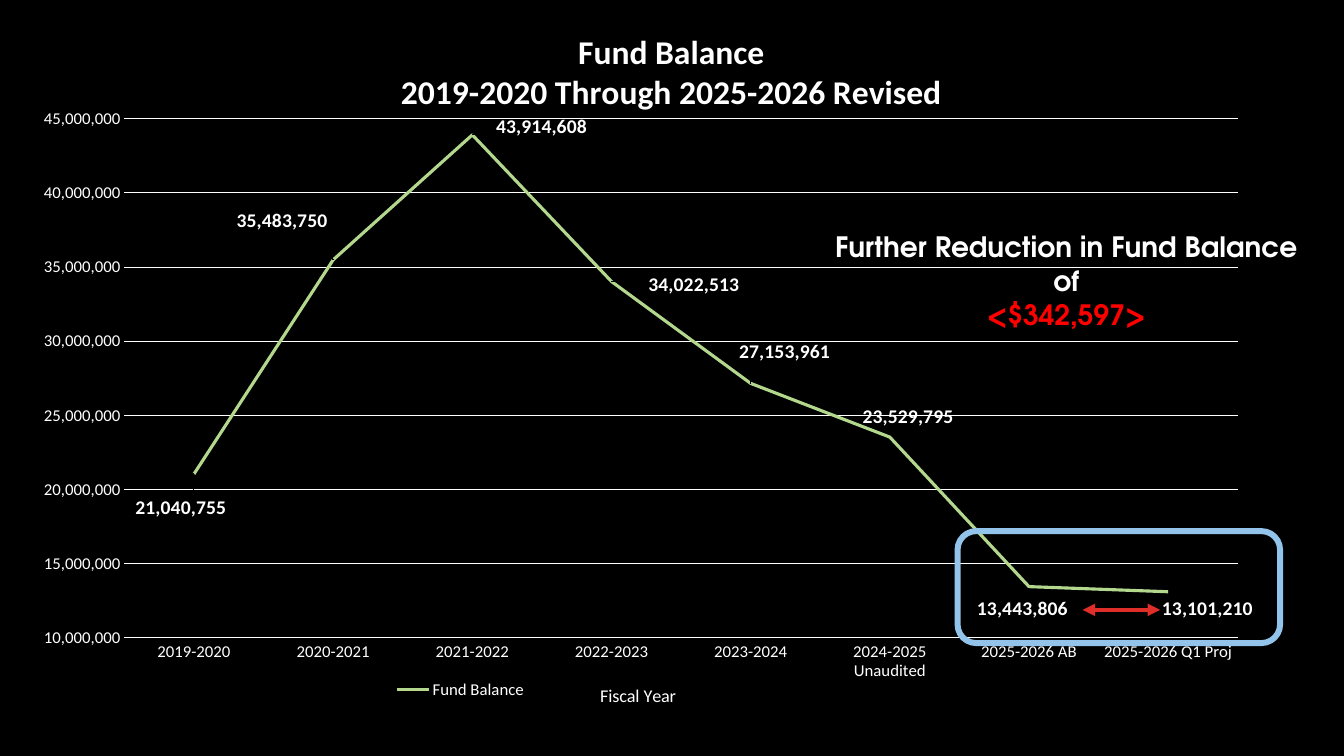
from lxml.etree import SubElement
from pptx import Presentation
from pptx.chart.data import CategoryChartData
from pptx.dml.color import RGBColor
from pptx.enum.chart import XL_CHART_TYPE, XL_LABEL_POSITION as LABEL_POS
from pptx.enum.chart import XL_LEGEND_POSITION as LEGEND_POS, XL_MARKER_STYLE as MARKER
from pptx.enum.chart import XL_TICK_MARK as TICK
from pptx.enum.shapes import MSO_CONNECTOR, MSO_SHAPE
from pptx.enum.text import PP_ALIGN
from pptx.oxml import parse_xml
from pptx.oxml.ns import nsdecls, qn
from pptx.util import Pt


def style(font, size, color="FFFFFF", bold=False, name="Calibri"):
    for key, value in dict(size=Pt(size), bold=bold, name=name).items():
        setattr(font, key, value)
    font.color.rgb = RGBColor.from_string(color)


def place(parent, index, **fractions):
    """Give a chart part a manual layout, in fractions of the chart."""
    for old in parent.findall(qn("c:layout")):
        parent.remove(old)
    tags = "".join(f'<c:{tag} val="{value}"/>' for tag, value in fractions.items())
    parent.insert(index, parse_xml(
        f'<c:layout {nsdecls("c")}><c:manualLayout>{tags}</c:manualLayout></c:layout>'))


deck = Presentation()
deck.slide_width, deck.slide_height = Pt(960), Pt(540)
slide = deck.slides.add_slide(deck.slide_layouts[6])
slide.background.fill.solid()
slide.background.fill.fore_color.rgb = RGBColor.from_string("000000")

# Fund balance by year, with the shift of each label from its default place
balances = [
    ("2019-2020", 21040755, -0.01, 0.072),
    ("2020-2021", 35483750, -0.039, -0.034),
    ("2021-2022", 43914608, 0.053, 0.011),
    ("2022-2023", 34022513, 0.063, 0.027),
    ("2023-2024", 27153961, 0.026, -0.023),
    ("2024-2025 Unaudited", 23529795, 0.014, -0.007),
    ("2025-2026 AB", 13443806, -0.005, 0.055),
    ("2025-2026 Q1 Proj", 13101210, 0.03, 0.047),
]
data = CategoryChartData(number_format="#,##0")
data.categories = [year for year, *_ in balances]
data.add_series("Fund Balance", [balance for _, balance, *_ in balances])
chart = slide.shapes.add_chart(XL_CHART_TYPE.LINE, Pt(12.24), Pt(5.76),
                               Pt(934.56), Pt(504), data).chart
style(chart.font, 10, name="TeX Gyre Adventor")
place(chart._chartSpace.chart.plotArea, 0, layoutTarget="inner", xMode="edge",
      yMode="edge", x=0.082, y=0.159, w=0.851, h=0.745)

# Titles
years, amounts = chart.category_axis, chart.value_axis
for title, text, size, bold, x, y in [
    (chart.chart_title, "Fund Balance\n2019-2020 Through 2025-2026 Revised",
     24, True, 0.291, 0.029),
    (years.axis_title, "Fiscal Year", 13, False, 0.443, 0.966),
]:
    title.text_frame.text = text
    for line in title.text_frame.paragraphs:
        style(line.runs[0].font, size, bold=bold)
    place(title._element, 1, xMode="edge", yMode="edge", x=x, y=y)

# Axes
for axis in (years, amounts):
    axis.major_tick_mark = axis.minor_tick_mark = TICK.NONE
    style(axis.tick_labels.font, 12)
for key, value in dict(minimum_scale=10000000, maximum_scale=45000000,
                       major_unit=5000000).items():
    setattr(amounts, key, value)
amounts.tick_labels.number_format = "#,##0"
amounts.tick_labels.number_format_is_linked = False
amounts.format.line.fill.background()
for line in (years.format.line, amounts.major_gridlines.format.line):
    line.color.rgb = RGBColor.from_string("FFFFFF")
    line.width = Pt(0.75)

# Legend
chart.has_legend = True
chart.legend.position = LEGEND_POS.BOTTOM
chart.legend.include_in_layout = False
style(chart.legend.font, 12)
place(chart.legend._element, 1, xMode="edge", yMode="edge", x=0.286, y=0.974)

# Balance line and its labels
chart.plots[0].vary_by_categories = False
balance_line = chart.plots[0].series[0]
balance_line.smooth = False
balance_line.marker.style = MARKER.NONE
balance_line.format.line.color.rgb = RGBColor.from_string("B3D78D")
balance_line.format.line.width = Pt(2.25)
labels = balance_line.data_labels
labels.show_value = True
labels.number_format, labels.number_format_is_linked = "#,##0", False
labels.position = LABEL_POS.ABOVE
style(labels.font, 14, bold=True)
for number in range(len(balances)):
    label = balance_line.points[number].data_label
    style(label.font, 14, bold=True)
    label.position = LABEL_POS.ABOVE
for element, (*_, dx, dy) in zip(chart._chartSpace.xpath(".//c:dLbl"), balances):
    place(element, 1, x=dx, y=dy)

# No leader lines from the points to their labels
labels._element.append(parse_xml(
    f'<c:extLst {nsdecls("c")}><c:ext uri="{{CE6537A1-D6FC-4f65-9D91-7224C49458BB}}" '
    'xmlns:c15="http://schemas.microsoft.com/office/drawing/2012/chart">'
    '<c15:showLeaderLines val="0"/></c:ext></c:extLst>'))

# Arrow between the last two balances
arrow = slide.shapes.add_connector(MSO_CONNECTOR.STRAIGHT, Pt(773.3), Pt(435.6),
                                   Pt(828.7), Pt(435.6))
arrow.line.color.rgb = RGBColor.from_string("DF2E28")
arrow.line.width = Pt(3)
for end in ("a:headEnd", "a:tailEnd"):
    SubElement(arrow.line._get_or_add_ln(), qn(end), type="triangle")
SubElement(arrow._element.spPr, qn("a:effectLst"))

# Reduction note
note = slide.shapes.add_textbox(Pt(588.2), Pt(160.6), Pt(347), Pt(80)).text_frame
note.word_wrap = False
note.text = "Further Reduction in Fund Balance\nof\n<$342,597>"
for line, color in zip(note.paragraphs, ("FFFFFF", "FFFFFF", "FF0000")):
    line.alignment = PP_ALIGN.CENTER
    style(line.runs[0].font, 20, color, True, "TeX Gyre Adventor")

# Frame around the last two balances
frame = slide.shapes.add_shape(MSO_SHAPE.ROUNDED_RECTANGLE, Pt(684), Pt(379.4),
                               Pt(230.4), Pt(80))
frame.shadow.inherit = False
frame.fill.background()
frame.line.color.rgb = RGBColor.from_string("92C3EA")
frame.line.width = Pt(4.25)

deck.save("out.pptx")
